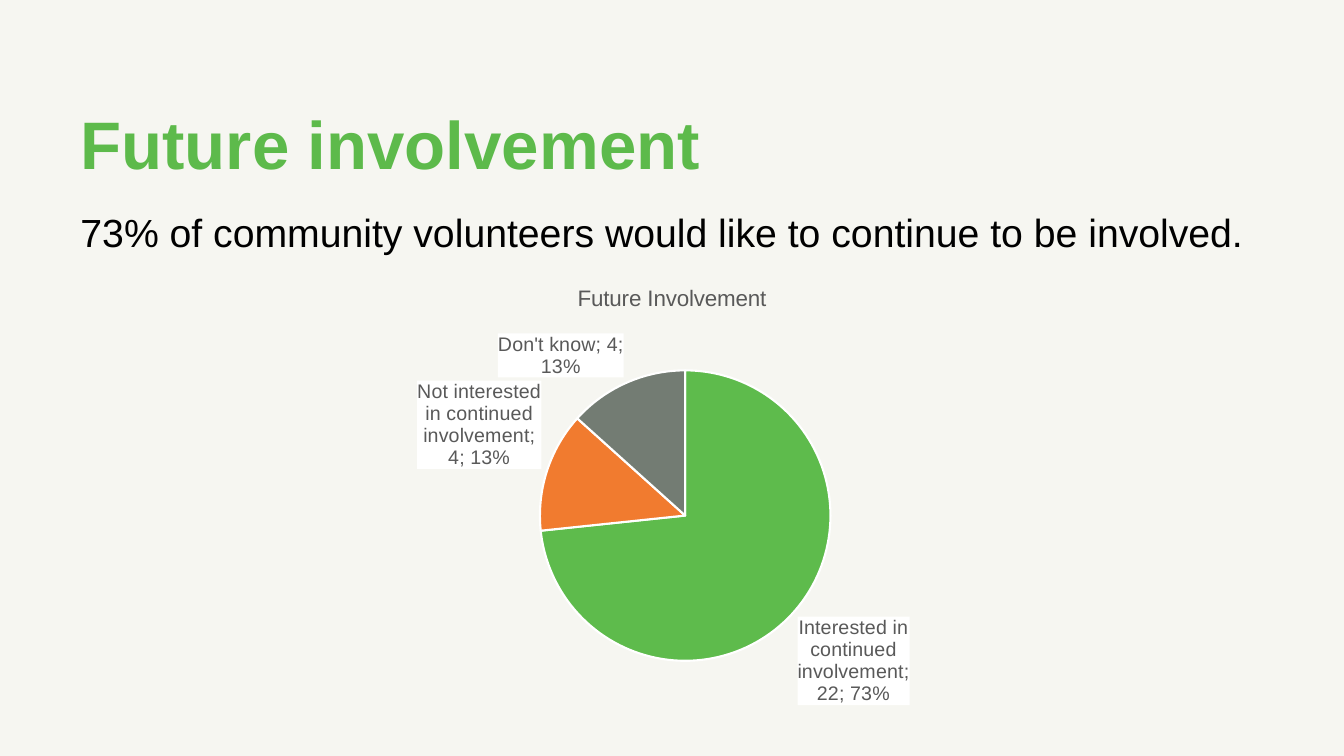
"""Builds a slide on the future involvement of community volunteers."""
from lxml.etree import SubElement
from pptx import Presentation
from pptx.chart.data import CategoryChartData
from pptx.dml.color import RGBColor
from pptx.enum.chart import XL_CHART_TYPE, XL_LABEL_POSITION
from pptx.enum.text import MSO_ANCHOR
from pptx.oxml import parse_xml
from pptx.oxml.ns import nsdecls, qn
from pptx.util import Inches, Pt

BACKGROUND = RGBColor(0xF6, 0xF6, 0xF1)
TITLE_GREEN = RGBColor(0x5D, 0xBA, 0x4B)
PIE_GREEN = RGBColor(0x5E, 0xBB, 0x4C)
ORANGE = RGBColor(0xF1, 0x7B, 0x2F)
GRAY = RGBColor(0x73, 0x7C, 0x73)
LABEL_GRAY = RGBColor(0x59, 0x59, 0x59)
WHITE = RGBColor(0xFF, 0xFF, 0xFF)
BLACK = RGBColor(0, 0, 0)
FONT = "Arial"


def write_text(frame, text, size, color, bold=False, line_spacing=None, before=0, after=0):
    """Write one formatted paragraph into a text frame."""
    para = frame.paragraphs[0]
    para.line_spacing = line_spacing
    para.space_before, para.space_after = Pt(before), Pt(after)
    span = para.add_run()
    span.text = text
    style_font(span.font, size, color, bold)


def style_font(font, size, color, bold=False):
    """Set the typeface, size, colour and weight of a font."""
    font.name, font.size, font.bold = FONT, Pt(size), bold
    font.color.rgb = color


class SlideBuilder:
    """Holds the current page and draws its elements."""

    def __init__(self, page):
        """Keep the page and paint its background."""
        self.page = page
        page.background.fill.solid()
        page.background.fill.fore_color.rgb = BACKGROUND

    def text(self, area, text, anchor=MSO_ANCHOR.TOP, **style):
        """Add a wrapped text box."""
        box = self.page.shapes.add_textbox(*map(Inches, area))
        box.text_frame.word_wrap = True
        box.text_frame.vertical_anchor = anchor
        write_text(box.text_frame, text, line_spacing=0.9, **style)

    def pie(self, area, title, answers, plot_area):
        """Add a pie chart from rows of category, value and colour."""
        data = CategoryChartData()
        data.categories = [category for category, _, _ in answers]
        data.add_series("Series 1", [value for _, value, _ in answers])
        frame = self.page.shapes.add_chart(XL_CHART_TYPE.PIE, *map(Inches, area), data)
        chart = frame.chart
        style_font(chart.font, 10, BLACK)
        chart.has_legend = False
        chart.has_title = True
        write_text(chart.chart_title.text_frame, title, 16, LABEL_GRAY)
        plot = chart.plots[0]
        plot.vary_by_categories = True
        for index, (_, _, color) in enumerate(answers):
            look = plot.series[0].points[index].format
            look.fill.solid()
            look.fill.fore_color.rgb = color
            look.line.color.rgb = WHITE
            look.line.width = Pt(1.5)
        self.pie_labels(plot.series[0].data_labels)
        self.place_plot(chart, plot_area)

    def pie_labels(self, labels):
        """Show category, value and share on white outside the slices."""
        style_font(labels.font, 14, LABEL_GRAY)
        labels.show_category_name = labels.show_value = labels.show_percentage = True
        labels.show_legend_key = labels.show_series_name = False
        labels.position = XL_LABEL_POSITION.OUTSIDE_END
        element = labels._element
        element.find(qn("c:txPr")).addprevious(parse_xml(
            f'<c:spPr {nsdecls("c", "a")}><a:solidFill><a:srgbClr val="{WHITE}"/>'
            '</a:solidFill></c:spPr>'))
        separator = parse_xml(f'<c:separator {nsdecls("c")}>; </c:separator>')
        element.find(qn("c:showPercent")).addnext(separator)
        bubble = element.find(qn("c:showBubbleSize"))
        if bubble is not None:
            bubble.addnext(separator)

    def place_plot(self, chart, plot_area):
        """Fix the inner plot area as fractions of the chart."""
        plot_element = chart._chartSpace.chart.plotArea
        for old in plot_element.findall(qn("c:layout")):
            plot_element.remove(old)
        layout = parse_xml(f'<c:layout {nsdecls("c")}><c:manualLayout/></c:layout>')
        settings = [("layoutTarget", "inner"), ("xMode", "edge"), ("yMode", "edge")]
        settings += zip("xywh", plot_area)
        for name, value in settings:
            SubElement(layout[0], qn(f"c:{name}")).set("val", str(value))
        plot_element.insert(0, layout)


def main():
    """Build and save the deck."""
    deck = Presentation()
    deck.slide_width, deck.slide_height = Inches(13.33), Inches(7.5)
    builder = SlideBuilder(deck.slides.add_slide(deck.slide_layouts[6]))
    builder.text((0.7, 0.42, 12.15, 1.45), "Future involvement", MSO_ANCHOR.BOTTOM,
                 size=48, color=TITLE_GREEN, bold=True)
    builder.text((0.7, 2.07, 12.63, 4.48),
                 "73% of community volunteers would like to continue to be involved.",
                 size=28, color=BLACK, before=10, after=6)
    answers = [
        ("Interested in continued involvement", 22, PIE_GREEN),
        ("Not interested in continued involvement", 4, ORANGE),
        ("Don't know", 4, GRAY),
    ]
    builder.pie((3.39, 2.63, 6.55, 4.69), "Future Involvement", answers,
                plot_area=(0.3, 0.22, 0.44, 0.62))
    deck.save("out.pptx")


if __name__ == "__main__":
    main()
